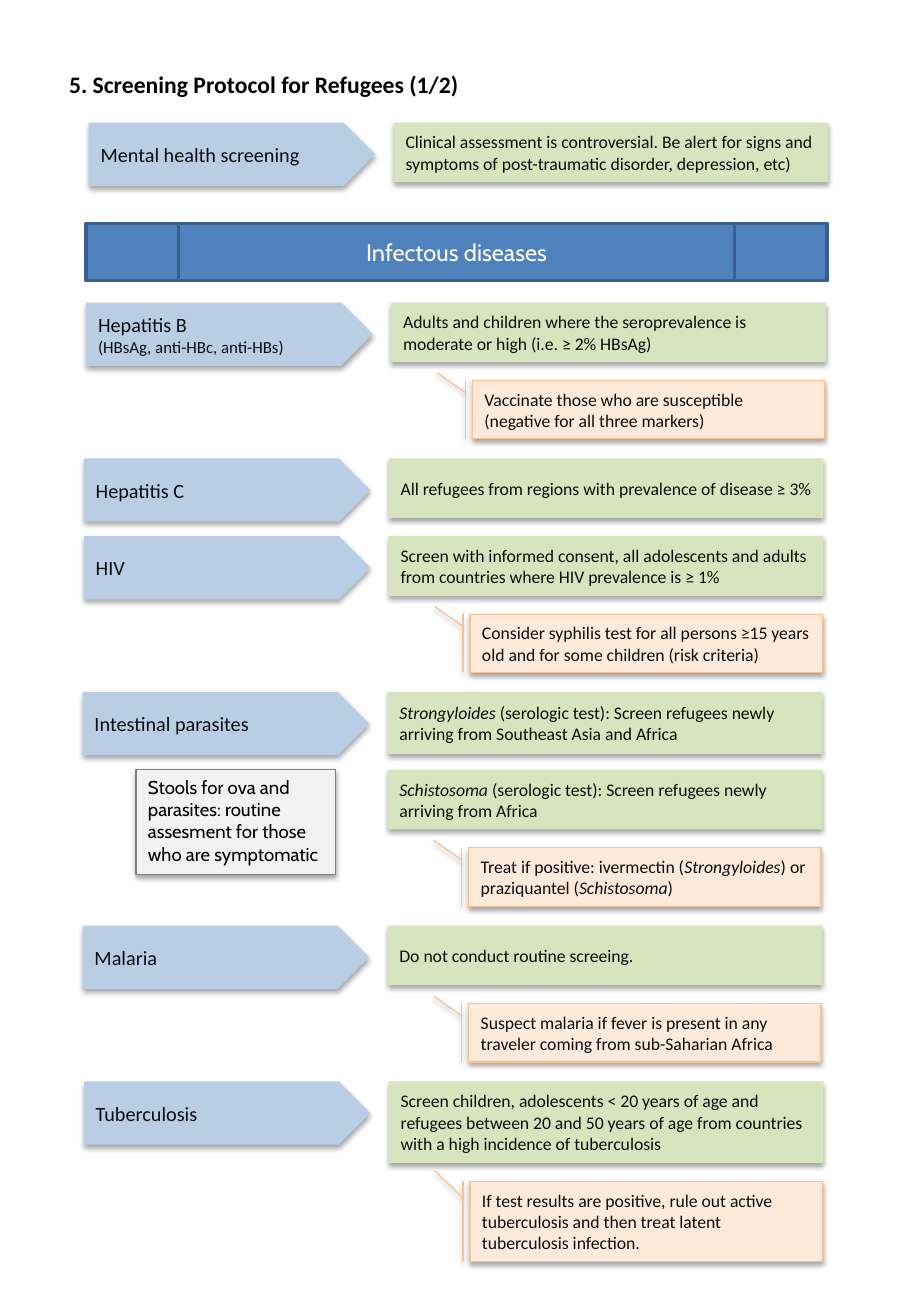
from collections import namedtuple
from dataclasses import dataclass

from lxml.etree import SubElement
from pptx import Presentation
from pptx.dml.color import RGBColor
from pptx.enum.shapes import MSO_SHAPE
from pptx.enum.text import MSO_ANCHOR, PP_ALIGN
from pptx.oxml.ns import qn
from pptx.util import Inches, Pt

Box = namedtuple("Box", "left top width height")


@dataclass(frozen=True)
class Theme:
    font: str = "Calibri"
    accent_font: str = "Cabin"
    black: str = "000000"
    ink: str = "0D0D0D"
    white: str = "FFFFFF"
    disease: str = "B9CDE5"
    finding: str = "D7E4BD"
    action: str = "FDEADA"
    action_line: str = "FAC090"
    banner: str = "4F81BD"
    banner_line: str = "3A5F8C"
    note: str = "F2F2F2"
    note_line: str = "808080"
    heading_size: float = 14
    disease_size: float = 12
    note_size: float = 11
    body_size: float = 10.5
    detail_size: float = 10


THEME = Theme()

# Grid: one slot per line of boxes, columns counted from a row's left edge
FIRST_SLOT = 2.49
PITCH = (8.90 - FIRST_SLOT) / 10
ARROW_WIDTH, ARROW_HEIGHT = 2.36, 0.52
FINDING_OFFSET, FINDING_WIDTH = 2.51, 3.58
ACTION_OFFSET, ACTION_WIDTH = 3.18, 2.90
TWO_LINES, TALL_TWO_LINES, THREE_LINES = 0.49, 0.51, 0.67

# Left edge, slot, disease, findings with their heights, action
ROWS = [
    (0.71, 0, "Hepatitis B\n(HBsAg, anti-HBc, anti-HBs)",
     [("Adults and children where the seroprevalence is moderate or high "
       "(i.e. ≥ 2% HBsAg)", TWO_LINES)],
     "Vaccinate those who are susceptible (negative for all three markers)"),
    (0.69, 2, "Hepatitis C",
     [("All refugees from regions with prevalence of disease ≥ 3%", TWO_LINES)],
     None),
    (0.69, 3, "HIV",
     [("Screen with informed consent, all adolescents and adults from "
       "countries where HIV prevalence is ≥ 1%", TWO_LINES)],
     "Consider syphilis test for all persons ≥15 years old and for some "
     "children (risk criteria)"),
    (0.68, 5, "Intestinal parasites",
     [("*Strongyloides* (serologic test): Screen refugees newly arriving from "
       "Southeast Asia and Africa", TALL_TWO_LINES),
      ("*Schistosoma* (serologic test): Screen refugees newly arriving from "
       "Africa", TWO_LINES)],
     "Treat if positive: ivermectin (*Strongyloides*) or praziquantel "
     "(*Schistosoma*)"),
    (0.68, 8, "Malaria",
     [("Do not conduct routine screeing.", TWO_LINES)],
     "Suspect malaria if fever is present in any traveler coming from "
     "sub-Saharian Africa"),
    (0.69, 10, "Tuberculosis",
     [("Screen children, adolescents < 20 years of age and refugees between "
       "20 and 50 years of age from countries with a high incidence of "
       "tuberculosis", THREE_LINES)],
     "If test results are positive, rule out active tuberculosis and then "
     "treat latent tuberculosis infection."),
]


def slot_top(slot):
    return FIRST_SLOT + slot * PITCH


def write(shape, text, size, color=THEME.ink, font=THEME.font, bold=False,
          align=PP_ALIGN.LEFT, anchor=MSO_ANCHOR.MIDDLE):
    """Fill a shape with text; parts between asterisks become italic."""
    frame = shape.text_frame
    frame.word_wrap = True
    frame.vertical_anchor = anchor
    frame.text = text
    for para in frame.paragraphs:
        parts = para.text.split("*")
        para.text = ""
        para.alignment = align
        for index, part in enumerate(parts):
            if not part:
                continue
            span = para.add_run()
            span.text = part
            span.font.name = font
            span.font.size = Pt(size)
            span.font.bold = bold
            span.font.italic = index % 2 == 1
            span.font.color.rgb = RGBColor.from_string(color)


def add_panel(page, kind, box, fill, line=None, line_width=0.75, shadow=True):
    shape = page.shapes.add_shape(kind, *map(Inches, box))
    shape.fill.solid()
    shape.fill.fore_color.rgb = RGBColor.from_string(fill)
    if line:
        shape.line.color.rgb = RGBColor.from_string(line)
        shape.line.width = Pt(line_width)
    else:
        shape.line.fill.background()
    shape.shadow.inherit = False
    if shadow:
        effects = shape.element.spPr.find(qn("a:effectLst"))
        outer = SubElement(effects, qn("a:outerShdw"), blurRad="40000",
                           dist="23000", dir="5400000", rotWithShape="0")
        tint = SubElement(outer, qn("a:srgbClr"), val=THEME.black)
        SubElement(tint, qn("a:alpha"), val="35000")
    return shape


def add_title(page, box):
    title = page.shapes.add_textbox(*map(Inches, box))
    write(title, "5. Screening Protocol for Refugees (1/2)", THEME.heading_size,
          THEME.black, bold=True, anchor=MSO_ANCHOR.TOP)


def add_banner(page, box):
    banner = add_panel(page, MSO_SHAPE.FLOWCHART_PREDEFINED_PROCESS, box,
                       THEME.banner, THEME.banner_line, 2, shadow=False)
    write(banner, "Infectous diseases", THEME.heading_size, THEME.white,
          THEME.accent_font, align=PP_ALIGN.CENTER)


def add_note(page, box):
    note = add_panel(page, MSO_SHAPE.RECTANGLE, box, THEME.note, THEME.note_line)
    write(note, "Stools for ova and parasites: routine assesment for those who "
          "are symptomatic", THEME.note_size, THEME.black, THEME.accent_font,
          anchor=MSO_ANCHOR.TOP)


def add_screening_row(page, left, top, disease, findings, action=None):
    # Disease arrow, with any second line set smaller
    arrow = add_panel(page, MSO_SHAPE.PENTAGON,
                      Box(left, top, ARROW_WIDTH, ARROW_HEIGHT), THEME.disease)
    write(arrow, disease, THEME.disease_size)
    for para in arrow.text_frame.paragraphs[1:]:
        for span in para.runs:
            span.font.size = Pt(THEME.detail_size)

    # Findings, one per slot
    for index, (text, height) in enumerate(findings):
        box = Box(left + FINDING_OFFSET, top + index * PITCH,
                  FINDING_WIDTH, height)
        write(add_panel(page, MSO_SHAPE.RECTANGLE, box, THEME.finding),
              text, THEME.body_size)

    # Action callout below the last finding
    if action:
        last_height = findings[-1][1]
        box = Box(left + ACTION_OFFSET,
                  top + len(findings) * PITCH + last_height - TWO_LINES,
                  ACTION_WIDTH, last_height - 0.01)
        callout = add_panel(page, MSO_SHAPE.LINE_CALLOUT_1_BORDER_AND_ACCENT_BAR,
                            box, THEME.action, THEME.action_line)
        for index, share in enumerate((0.21, -0.02, -0.13, -0.10)):
            callout.adjustments[index] = share
        write(callout, action, THEME.body_size)


def main():
    deck = Presentation()
    deck.slide_width, deck.slide_height = Inches(7.5), Inches(10.83)
    page = deck.slides.add_slide(deck.slide_layouts[6])

    add_title(page, Box(0.47, 0.53, 6.39, 0.34))
    add_screening_row(
        page, 0.73, 1.01, "Mental health screening",
        [("Clinical assessment is controversial. Be alert for signs and "
          "symptoms of post-traumatic disorder, depression, etc)", TWO_LINES)])
    add_banner(page, Box(0.71, 1.84, 6.10, 0.47))
    for left, slot, disease, findings, action in ROWS:
        add_screening_row(page, left, slot_top(slot), disease, findings, action)
    add_note(page, Box(1.12, slot_top(6), 1.64, 0.86))

    deck.save("out.pptx")


if __name__ == "__main__":
    main()
